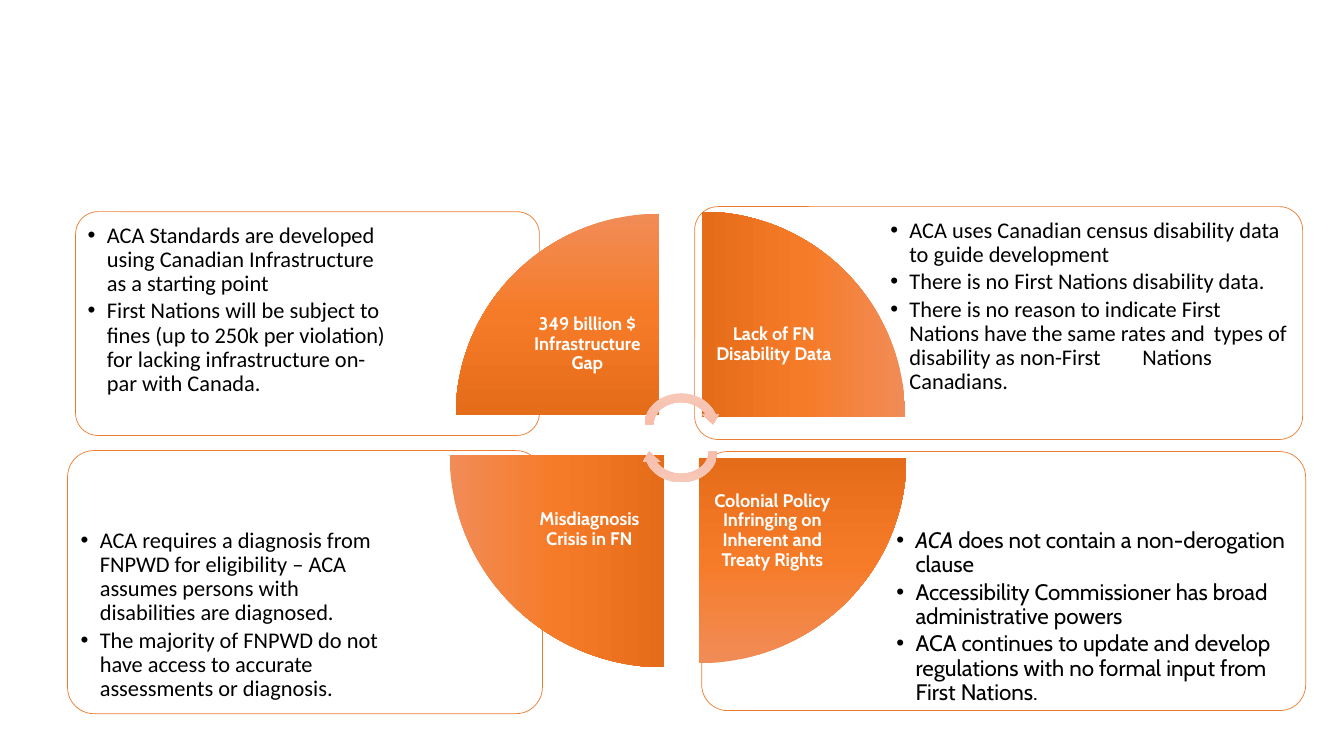
import copy
from dataclasses import dataclass

import lxml.etree
import pptx
import pptx.dml.color
import pptx.enum.shapes
import pptx.enum.text
import pptx.oxml.ns
import pptx.util

Inches = pptx.util.Inches
Pt = pptx.util.Pt
qn = pptx.oxml.ns.qn
SHAPES = pptx.enum.shapes.MSO_SHAPE
Box = tuple[float, float, float, float]

HUES = {"white": "FFFFFF", "black": "000000", "edge": "ED7D31"}
WEDGE = ("F18C57", "F67B28", "E56C19")
ARROW = ("F7C9BA", "F8BEAA", "E2A692")
INDENT = 0.19
TABS = (2.5, 3.21)


@dataclass(frozen=True)
class Panel:
    """Outlined frame with a bullet list in part of it."""
    frame: Box
    area: Box
    items: tuple[str, ...]
    font: str = "Calibri"
    lead: str = ""


@dataclass(frozen=True)
class Wedge:
    """Quarter of the circle with its label."""
    frame: Box
    turn: int
    area: Box
    label: str


PANELS = (
    Panel((6.96, 4.48, 5.99, 2.57), (8.82, 5.18, 4.08, 1.81), (
        " does not contain a non-derogation clause",
        "Accessibility Commissioner has broad administrative powers",
        "ACA continues to update and develop regulations with no formal input "
        "from First Nations.",
    ), "Cabin", "ACA"),
    Panel((0.67, 4.47, 4.71, 2.61), (0.73, 5.18, 3.18, 1.84), (
        "ACA requires a diagnosis from FNPWD for eligibility – ACA assumes "
        "persons with disabilities are diagnosed.",
        "The majority of FNPWD do not have access to accurate assessments or "
        "diagnosis.",
    )),
    Panel((6.89, 2.05, 6.03, 2.31), (8.76, 2.1, 4.12, 1.63), (
        "ACA uses Canadian census disability data to guide development",
        "There is no First Nations disability data.",
        "There is no reason to indicate First Nations have the same rates and"
        "\ttypes of disability as non-First\tNations Canadians.",
    )),
    Panel((0.75, 2.1, 4.6, 2.22), (0.8, 2.15, 3.12, 1.57), (
        "ACA Standards are developed using Canadian Infrastructure as a "
        "starting point",
        "First Nations will be subject to fines (up to 250k per violation) for "
        "lacking infrastructure on-par with Canada.",
    )),
)
WEDGES = (
    Wedge((4.52, 2.12, 2.02, 2), 0, (5.11, 2.71, 1.43, 1.41),
          "349 billion $ Infrastructure Gap"),
    Wedge((6.95, 2.11, 2.04, 2.02), 90, (6.96, 2.7, 1.43, 1.44),
          "Lack of FN Disability Data"),
    Wedge((6.93, 4.54, 2.06, 2.04), 180, (6.93, 4.54, 1.46, 1.45),
          "Colonial Policy Infringing on Inherent and Treaty Rights"),
    Wedge((4.47, 4.5, 2.11, 2.13), 270, (5.09, 4.51, 1.51, 1.49),
          "Misdiagnosis Crisis in FN"),
)
ARROWS = (((6.35, 3.86, 0.81, 0.7), 0), ((6.35, 4.13, 0.81, 0.7), 180))


def tint(name: str):
    return pptx.dml.color.RGBColor.from_string(HUES.get(name, name))


def add_shape(slide, kind, box: Box, turn: int = 0):
    shape = slide.shapes.add_shape(kind, *map(Inches, box))
    shape.shadow.inherit = False
    shape.rotation = turn
    return shape


def shade(shape, hues: tuple[str, ...]) -> None:
    """Fill from top to bottom with three even stops, and drop the line."""
    shape.line.fill.background()
    shape.fill.gradient()
    stops = shape._element.spPr.find(".//" + qn("a:gsLst"))
    stops.append(copy.deepcopy(stops[0]))
    for i, (stop, hue) in enumerate(zip(shape.fill.gradient_stops, hues)):
        stop.position = i / 2
        stop.color.rgb = tint(hue)
    shape.fill.gradient_angle = 270


def add_text(slide, box: Box, inset: float):
    frame = slide.shapes.add_textbox(*map(Inches, box)).text_frame
    frame.word_wrap = True
    frame.margin_left = frame.margin_right = Inches(inset)
    frame.margin_top = frame.margin_bottom = Inches(inset)
    return frame


def style(para, font: str, size: float, hue: str, after: float) -> None:
    para.line_spacing = 0.9
    para.space_after = Pt(after)
    para.font.name = font
    para.font.size = Pt(size)
    para.font.color.rgb = tint(hue)


def add_bullet(para, tabs: tuple[float, ...]) -> None:
    props = para._p.get_or_add_pPr()
    props.set("marL", str(Inches(INDENT)))
    props.set("indent", str(-Inches(INDENT)))
    lxml.etree.SubElement(props, qn("a:buFont"), typeface="Arial")
    lxml.etree.SubElement(props, qn("a:buChar"), char="•")
    if tabs:
        stops = lxml.etree.SubElement(props, qn("a:tabLst"))
        for tab in tabs:
            lxml.etree.SubElement(stops, qn("a:tab"), pos=str(Inches(tab)), algn="l")


def draw_panel(slide, panel: Panel) -> None:
    shape = add_shape(slide, SHAPES.ROUNDED_RECTANGLE, panel.frame)
    shape.adjustments[0] = 0.1
    shape.fill.solid()
    shape.fill.fore_color.rgb = tint("white")
    paint = shape._element.spPr.find(qn("a:solidFill"))[0]
    lxml.etree.SubElement(paint, qn("a:alpha"), val="90000")
    shape.line.color.rgb = tint("edge")
    shape.line.width = Pt(0.5)

    frame = add_text(slide, panel.area, 0.07)
    for i, item in enumerate(panel.items):
        para = frame.add_paragraph() if i else frame.paragraphs[0]
        add_bullet(para, TABS if "\t" in item else ())
        if panel.lead and not i:
            run = para.add_run()
            run.text = panel.lead
            run.font.italic = True
        para.add_run().text = item
        style(para, panel.font, 16, "black", 2.4)


def draw_wedge(slide, wedge: Wedge) -> None:
    shade(add_shape(slide, SHAPES.PIE_WEDGE, wedge.frame, wedge.turn), WEDGE)
    frame = add_text(slide, wedge.area, 0.1)
    frame.vertical_anchor = pptx.enum.text.MSO_ANCHOR.MIDDLE
    para = frame.paragraphs[0]
    para.add_run().text = wedge.label
    para.alignment = pptx.enum.text.PP_ALIGN.CENTER
    style(para, "Cabin", 13, "white", 4.5)
    para.font.bold = True


def main() -> None:
    deck = pptx.Presentation()
    deck.slide_width, deck.slide_height = Inches(13.33), Inches(7.5)
    slide = deck.slides.add_slide(deck.slide_layouts[6])
    for panel in PANELS:
        draw_panel(slide, panel)
    for wedge in WEDGES:
        draw_wedge(slide, wedge)
    for box, turn in ARROWS:
        shade(add_shape(slide, SHAPES.CIRCULAR_ARROW, box, turn), ARROW)
    deck.save("out.pptx")


if __name__ == "__main__":
    main()
